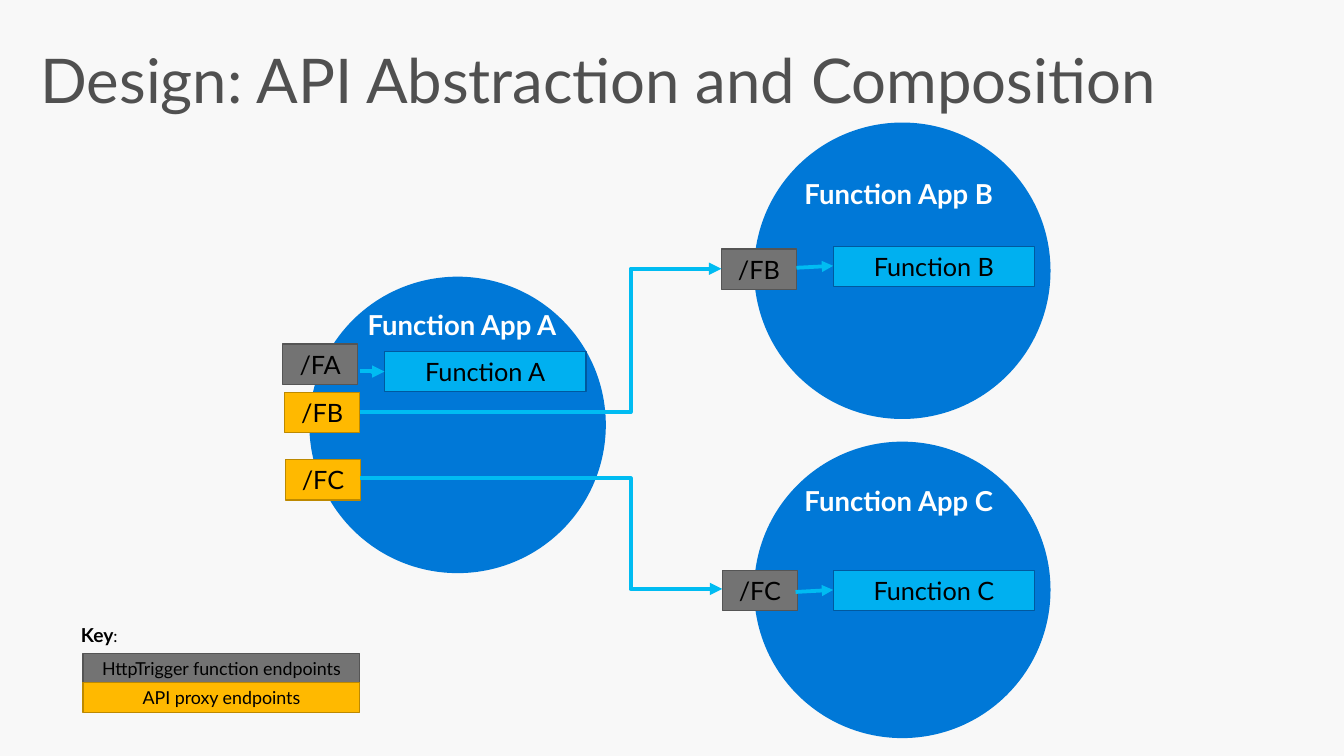
from dataclasses import dataclass

from lxml import etree
from pptx import Presentation
from pptx.dml.color import RGBColor
from pptx.enum.shapes import MSO_CONNECTOR, MSO_SHAPE
from pptx.enum.text import MSO_ANCHOR, MSO_AUTO_SIZE, PP_ALIGN
from pptx.oxml.ns import qn
from pptx.slide import Slide
from pptx.text.text import TextFrame, _Paragraph
from pptx.util import Pt

RECTANGLE, OVAL = MSO_SHAPE.RECTANGLE, MSO_SHAPE.OVAL
STRAIGHT, ELBOW = MSO_CONNECTOR.STRAIGHT, MSO_CONNECTOR.ELBOW
MIDDLE, TOP = MSO_ANCHOR.MIDDLE, MSO_ANCHOR.TOP
LEFT, CENTER = PP_ALIGN.LEFT, PP_ALIGN.CENTER
NO_AUTOFIT = MSO_AUTO_SIZE.NONE

FONT = "Lato"
BACKGROUND = RGBColor(0xF8, 0xF8, 0xF8)
TITLE_GRAY = RGBColor(0x50, 0x50, 0x50)
BLACK = RGBColor(0x00, 0x00, 0x00)
WHITE = RGBColor(0xFF, 0xFF, 0xFF)
APP_BLUE = RGBColor(0x00, 0x78, 0xD7)
ARROW_CYAN = RGBColor(0x00, 0xBC, 0xF2)


@dataclass(frozen=True)
class BoxStyle:
    fill: RGBColor
    line: RGBColor


FUNCTION = BoxStyle(RGBColor(0x00, 0xB0, 0xF0), RGBColor(0x00, 0x59, 0x9F))
TRIGGER = BoxStyle(RGBColor(0x73, 0x73, 0x73), RGBColor(0x55, 0x55, 0x55))
PROXY = BoxStyle(RGBColor(0xFF, 0xB9, 0x00), RGBColor(0xBD, 0x89, 0x00))

APP_DIAMETER = 216
BOX_HEIGHT = 29.5
ENDPOINT_WIDTH = 54.7
FUNCTION_WIDTH = 146.9
KEY_LEFT, KEY_TOP, KEY_WIDTH, KEY_ROW = 60.5, 475.9, 201.6, 21.6


@dataclass(frozen=True)
class FunctionApp:
    letter: str
    left: float
    top: float
    name_left: float
    name_top: float
    function_left: float
    function_top: float


@dataclass(frozen=True)
class Box:
    label: str
    left: float
    top: float
    style: BoxStyle
    width: float = ENDPOINT_WIDTH
    height: float = BOX_HEIGHT
    size: float = 18.4


@dataclass(frozen=True)
class Arrow:
    start: tuple[float, float]
    end: tuple[float, float]
    width: float = 3
    bend: float | None = None


APPS = [
    FunctionApp("A", 225.4, 201.6, 253.4, 216, 280.1, 255.9),
    FunctionApp("C", 549.4, 321.8, 571.7, 344.2, 607, 415.4),
    FunctionApp("B", 549.4, 89.3, 571.7, 121, 607, 179.5),
]
ARROWS = [
    Arrow((262.1, 348.5), (526.3, 429.1), bend=0.747),
    Arrow((262.1, 300.2), (525.6, 195.8), bend=0.749),
    Arrow((262.1, 270), (280.1, 270.7), bend=0.5),
    Arrow((579.6, 431.3), (607, 429.8), 2.75),
    Arrow((580.3, 195.1), (607, 193.7), 2.75),
]
ENDPOINTS = [
    Box("/FB", 207.4, 285.8, PROXY),
    Box("/FA", 205.9, 250.6, TRIGGER),
    Box("/FC", 208, 334.8, PROXY),
    Box("/FC", 526.3, 415.4, TRIGGER),
    Box("/FB", 525.6, 181.4, TRIGGER),
]
KEY = [("HttpTrigger function endpoints", TRIGGER), ("API proxy endpoints", PROXY)]


def add_run(paragraph: _Paragraph, text: str, size: float, color: RGBColor, bold: bool = False) -> None:
    run = paragraph.add_run()
    run.text = text
    run.font.name = FONT
    run.font.size = Pt(size)
    run.font.bold = bold
    run.font.color.rgb = color


def set_margins(frame: TextFrame, horizontal: float, vertical: float) -> None:
    frame.margin_left = frame.margin_right = Pt(horizontal)
    frame.margin_top = frame.margin_bottom = Pt(vertical)


def add_text_area(slide: Slide, left: float, top: float, width: float, height: float) -> TextFrame:
    frame = slide.shapes.add_textbox(Pt(left), Pt(top), Pt(width), Pt(height)).text_frame
    frame.word_wrap = True
    frame.vertical_anchor = TOP
    return frame


def add_title(slide: Slide) -> None:
    title = slide.shapes.title
    title.left, title.top, title.width, title.height = Pt(22.3), Pt(23.8), Pt(954.7), Pt(73.4)
    frame = title.text_frame
    frame.auto_size = NO_AUTOFIT
    frame.vertical_anchor = MIDDLE
    set_margins(frame, 7.2, 3.6)
    paragraph = frame.paragraphs[0]
    paragraph.alignment = LEFT
    paragraph.line_spacing = 0.9
    add_run(paragraph, "Design: API Abstraction and Composition", 44.9, TITLE_GRAY)


def add_app_circle(slide: Slide, app: FunctionApp) -> None:
    circle = slide.shapes.add_shape(OVAL, Pt(app.left), Pt(app.top), Pt(APP_DIAMETER), Pt(APP_DIAMETER))
    circle.shadow.inherit = False
    circle.fill.solid()
    circle.fill.fore_color.rgb = APP_BLUE
    circle.line.fill.background()


def add_app_name(slide: Slide, app: FunctionApp) -> None:
    frame = add_text_area(slide, app.name_left, app.name_top, 236.2, 45.4)
    set_margins(frame, 14.4, 11.5)
    paragraph = frame.paragraphs[0]
    paragraph.line_spacing = 0.9
    paragraph.space_after = Pt(6)
    add_run(paragraph, f"Function App {app.letter}", 20, WHITE, bold=True)


def add_box(slide: Slide, box: Box) -> None:
    shape = slide.shapes.add_shape(RECTANGLE, Pt(box.left), Pt(box.top), Pt(box.width), Pt(box.height))
    shape.shadow.inherit = False
    shape.fill.solid()
    shape.fill.fore_color.rgb = box.style.fill
    shape.line.color.rgb = box.style.line
    shape.line.width = Pt(0.85)
    frame = shape.text_frame
    frame.word_wrap = True
    frame.vertical_anchor = MIDDLE
    paragraph = frame.paragraphs[0]
    paragraph.alignment = CENTER
    add_run(paragraph, box.label, box.size, BLACK)


def add_arrow(slide: Slide, arrow: Arrow) -> None:
    kind = STRAIGHT if arrow.bend is None else ELBOW
    connector = slide.shapes.add_connector(kind, *map(Pt, arrow.start + arrow.end))
    connector.line.color.rgb = ARROW_CYAN
    connector.line.width = Pt(arrow.width)
    properties = connector.element.spPr
    etree.SubElement(properties.find(qn("a:ln")), qn("a:tailEnd"), type="triangle")
    etree.SubElement(properties, qn("a:effectLst"))
    if arrow.bend is not None:
        adjustments = next(properties.iter(qn("a:avLst")))
        etree.SubElement(adjustments, qn("a:gd"), name="adj1", fmla=f"val {round(arrow.bend * 100000)}")


def add_key(slide: Slide) -> None:
    heading = add_text_area(slide, 51.8, 450.7, 55.4, 24.5).paragraphs[0]
    add_run(heading, "Key", 14, BLACK, bold=True)
    add_run(heading, ":", 12.2, BLACK)
    for row, (label, style) in enumerate(KEY):
        add_box(slide, Box(label, KEY_LEFT, KEY_TOP + row * KEY_ROW, style, KEY_WIDTH, KEY_ROW, 13))


def main() -> None:
    presentation = Presentation()
    presentation.slide_width, presentation.slide_height = Pt(979.2), Pt(550.8)
    slide = presentation.slides.add_slide(presentation.slide_layouts[5])
    slide.background.fill.solid()
    slide.background.fill.fore_color.rgb = BACKGROUND
    add_title(slide)
    for app in APPS:
        add_app_circle(slide, app)
        add_app_name(slide, app)
        add_box(slide, Box(f"Function {app.letter}", app.function_left, app.function_top, FUNCTION, FUNCTION_WIDTH))
    for endpoint in ENDPOINTS:
        add_box(slide, endpoint)
    for arrow in ARROWS:
        add_arrow(slide, arrow)
    add_key(slide)
    presentation.save("out.pptx")


if __name__ == "__main__":
    main()
